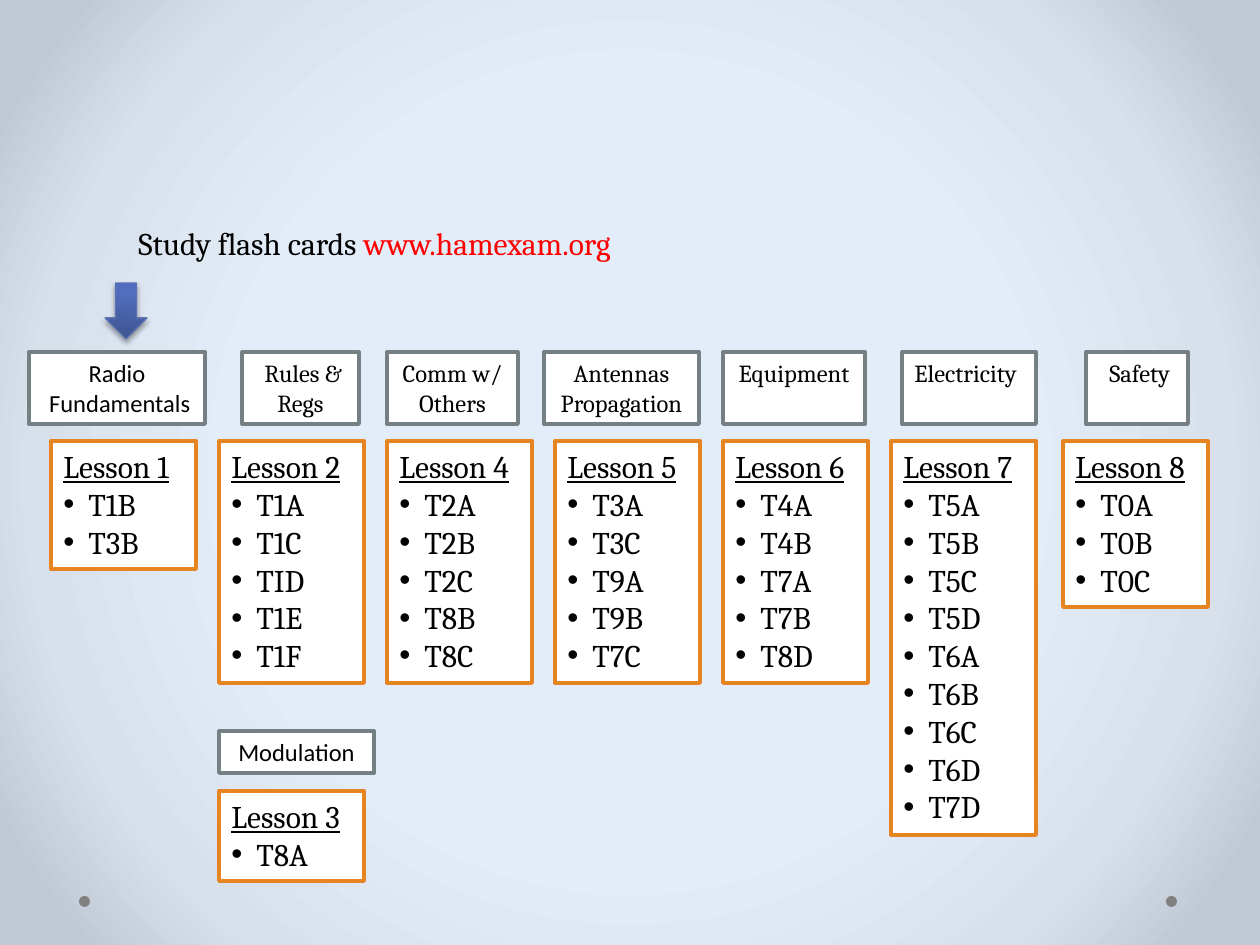
from pptx import Presentation
from pptx.dml.color import RGBColor
from pptx.enum.shapes import MSO_SHAPE as Shape
from pptx.enum.text import MSO_ANCHOR as Anchor, PP_ALIGN as Align
from pptx.oxml import parse_xml
from pptx.oxml.ns import nsdecls
from pptx.util import Pt

PX = 914400 / 126
ORANGE, GREY = "E68422", "758085"
rgb = RGBColor.from_string


def grad(node, stops, tail):
    """Swap the content of a gradFill node for these stops and direction."""
    for child in list(node):
        node.remove(child)
    marks = "".join(f'<a:gs pos="{pos * 1000}"><a:srgbClr val="{tint}"/></a:gs>'
                    for pos, tint in stops)
    node.append(parse_xml(f'<a:gsLst {nsdecls("a")}>{marks}</a:gsLst>'))
    node.append(parse_xml(tail))


def card(x, y, w, h, edge, lines, face, size, align):
    """Add a white framed box; an orange one has a heading and bullets."""
    box = slide.shapes.add_shape(Shape.RECTANGLE, *[round(n * PX) for n in (x, y, w, h)])
    box.shadow.inherit = False
    box.fill.solid()
    box.fill.fore_color.rgb = rgb("FFFFFF")
    box.line.color.rgb = rgb(edge)
    box.line.width = Pt(2.25)
    frame = box.text_frame
    frame.word_wrap = True
    frame.vertical_anchor = Anchor.TOP
    frame.text = "\n".join(lines)
    for i, para in enumerate(frame.paragraphs):
        para.alignment = align
        if edge == ORANGE and i:
            props = para._p.get_or_add_pPr()
            props.set("marL", str(round(25 * PX)))
            props.set("indent", str(round(-25 * PX)))
            props.append(parse_xml(f'<a:buFont {nsdecls("a")} typeface="Arial"/>'))
            props.append(parse_xml(f'<a:buChar {nsdecls("a")} char="•"/>'))
        para.font.name = face
        para.font.size = Pt(size)
        para.font.color.rgb = rgb("000000")
        para.font.underline = edge == ORANGE and i == 0


deck = Presentation()
deck.slide_width, deck.slide_height = round(1260 * PX), round(945 * PX)
slide = deck.slides.add_slide(deck.slide_layouts[6])

# Background
slide.background.fill.gradient()
grad(slide.element.xpath(".//a:gradFill")[0],
     [(50, "E3EDF9"), (76, "D8E0EB"), (92, "BFC9D4")],
     f'<a:path {nsdecls("a")} path="circle">'
     '<a:fillToRect l="50000" t="50000" r="50000" b="50000"/></a:path>')
for x in (1166, 79):
    dot = slide.shapes.add_shape(Shape.OVAL, *[round(n * PX) for n in (x, 896, 11, 11)])
    dot.shadow.inherit = False
    dot.fill.solid()
    dot.fill.fore_color.rgb = rgb("808080")
    dot.line.fill.background()

# Study line
study = slide.shapes.add_textbox(*[round(n * PX) for n in (126, 218, 524, 50)])
study.text_frame.word_wrap = True
para = study.text_frame.paragraphs[0]
para.font.name = "Cambria"
para.font.size = Pt(18)
for text, tint in [("Study flash cards ", "000000"), ("www.hamexam.org", "FF0000")]:
    run = para.add_run()
    run.text = text
    run.font.color.rgb = rgb(tint)

# Lessons: number, left, top, question groups
lessons = [
    (1, 51, 441, "T1B T3B"),
    (2, 219, 441, "T1A T1C TID T1E T1F"),
    (4, 387, 441, "T2A T2B T2C T8B T8C"),
    (5, 555, 441, "T3A T3C T9A T9B T7C"),
    (6, 723, 441, "T4A T4B T7A T7B T8D"),
    (7, 891, 441, "T5A T5B T5C T5D T6A T6B T6C T6D T7D"),
    (8, 1063, 441, "T0A T0B T0C"),
    (3, 219, 791, "T8A"),
]
for num, x, y, groups in lessons:
    lines = [f"Lesson {num}", *groups.split()]
    card(x, y, 145, 38 * len(lines) + 14, ORANGE, lines, "Cambria", 18, Align.LEFT)

# Topics above the lessons
topics = [
    (29, 352, 176, 72, "Calibri", Align.CENTER, ["Radio", " Fundamentals"]),
    (242, 352, 117, 72, "Cambria", Align.CENTER, [" Rules &", "Regs"]),
    (387, 352, 131, 72, "Cambria", Align.CENTER, ["Comm w/", "Others"]),
    (544, 352, 155, 72, "Cambria", Align.CENTER, ["Antennas", "Propagation"]),
    (723, 352, 142, 72, "Cambria", Align.CENTER, ["Equipment"]),
    (902, 352, 134, 72, "Cambria", Align.LEFT, ["Electricity"]),
    (1086, 352, 102, 72, "Cambria", Align.CENTER, [" Safety"]),
    (219, 731, 155, 42, "Calibri", Align.CENTER, ["Modulation"]),
]
for x, y, w, h, face, align, lines in topics:
    card(x, y, w, h, GREY, lines, face, 14, align)

# Arrow to the first topic
arrow = slide.shapes.add_shape(Shape.DOWN_ARROW, *[round(n * PX) for n in (105, 283, 42, 56)])
arrow.fill.gradient()
grad(arrow.element.xpath(".//a:gradFill")[0],
     [(0, "3E5490"), (80, "516DBB"), (100, "4F6CBE")],
     f'<a:lin {nsdecls("a")} ang="16200000" scaled="0"/>')
arrow.line.color.rgb = rgb("5C72B2")
arrow.line.width = Pt(0.75)
arrow.shadow.inherit = False
arrow.element.xpath(".//a:effectLst")[0].append(parse_xml(
    f'<a:outerShdw {nsdecls("a")} blurRad="{Pt(3.1)}" dist="{Pt(1.8)}" dir="5400000" rotWithShape="0">'
    '<a:srgbClr val="000000"><a:alpha val="35000"/></a:srgbClr></a:outerShdw>'))

deck.save("out.pptx")
